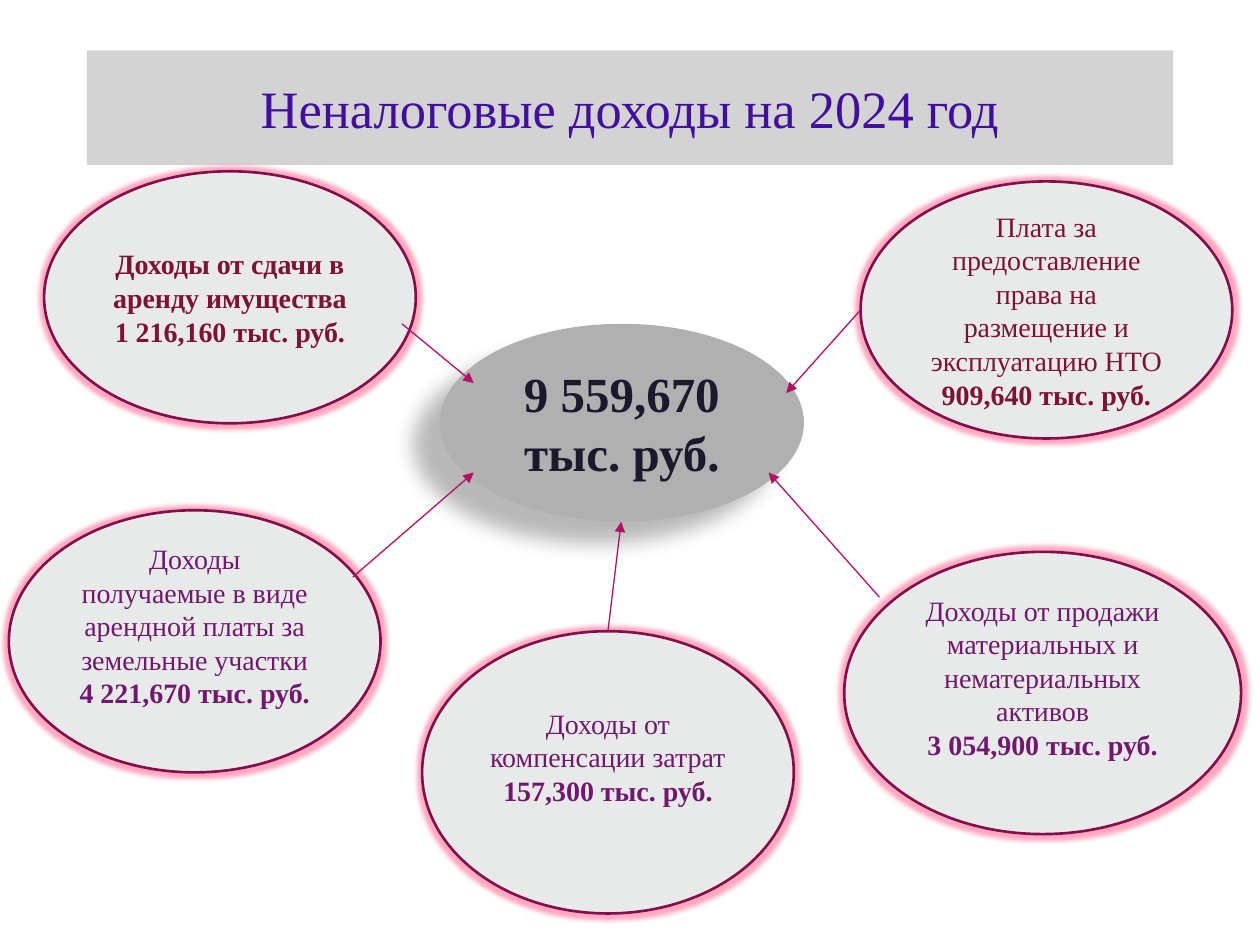
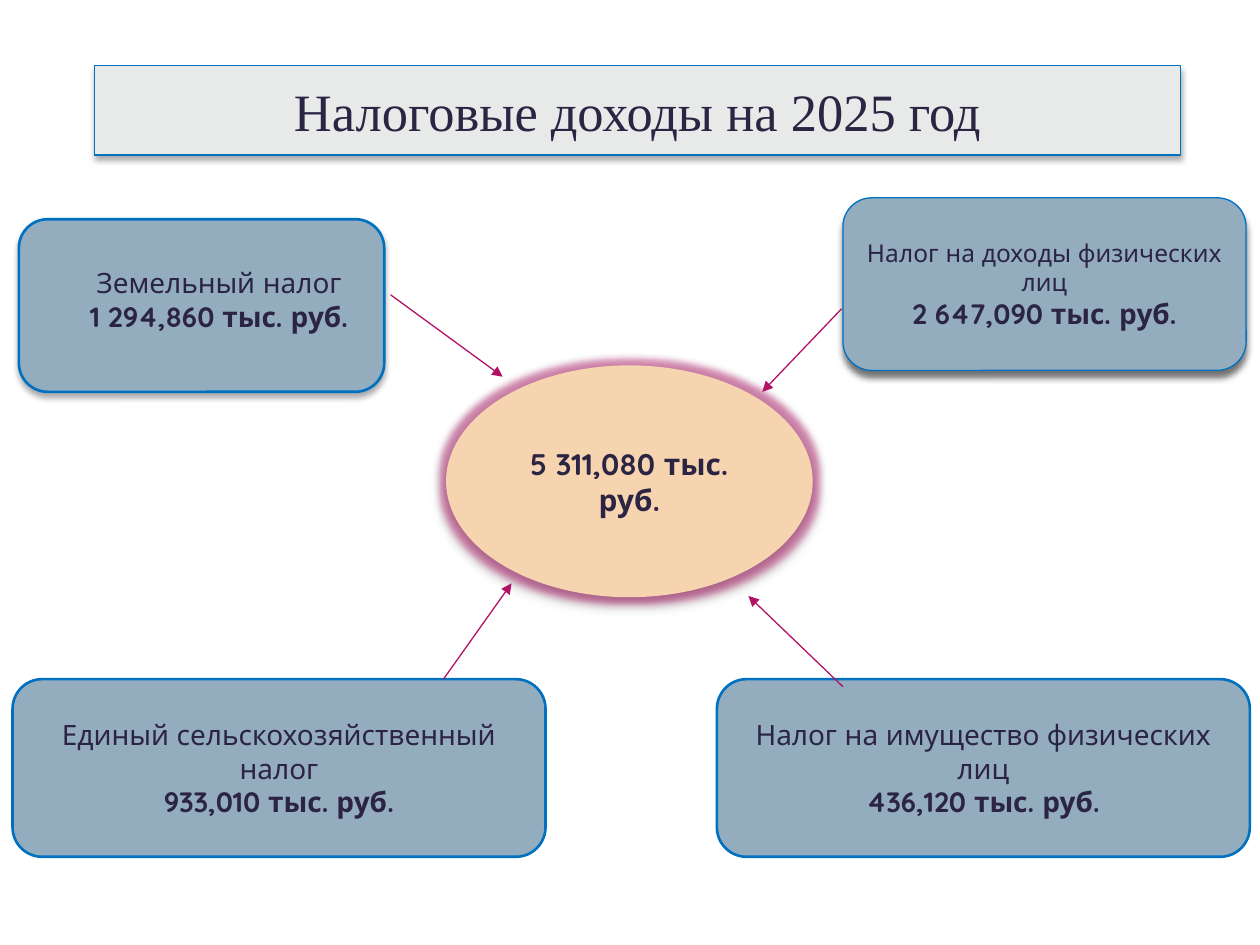
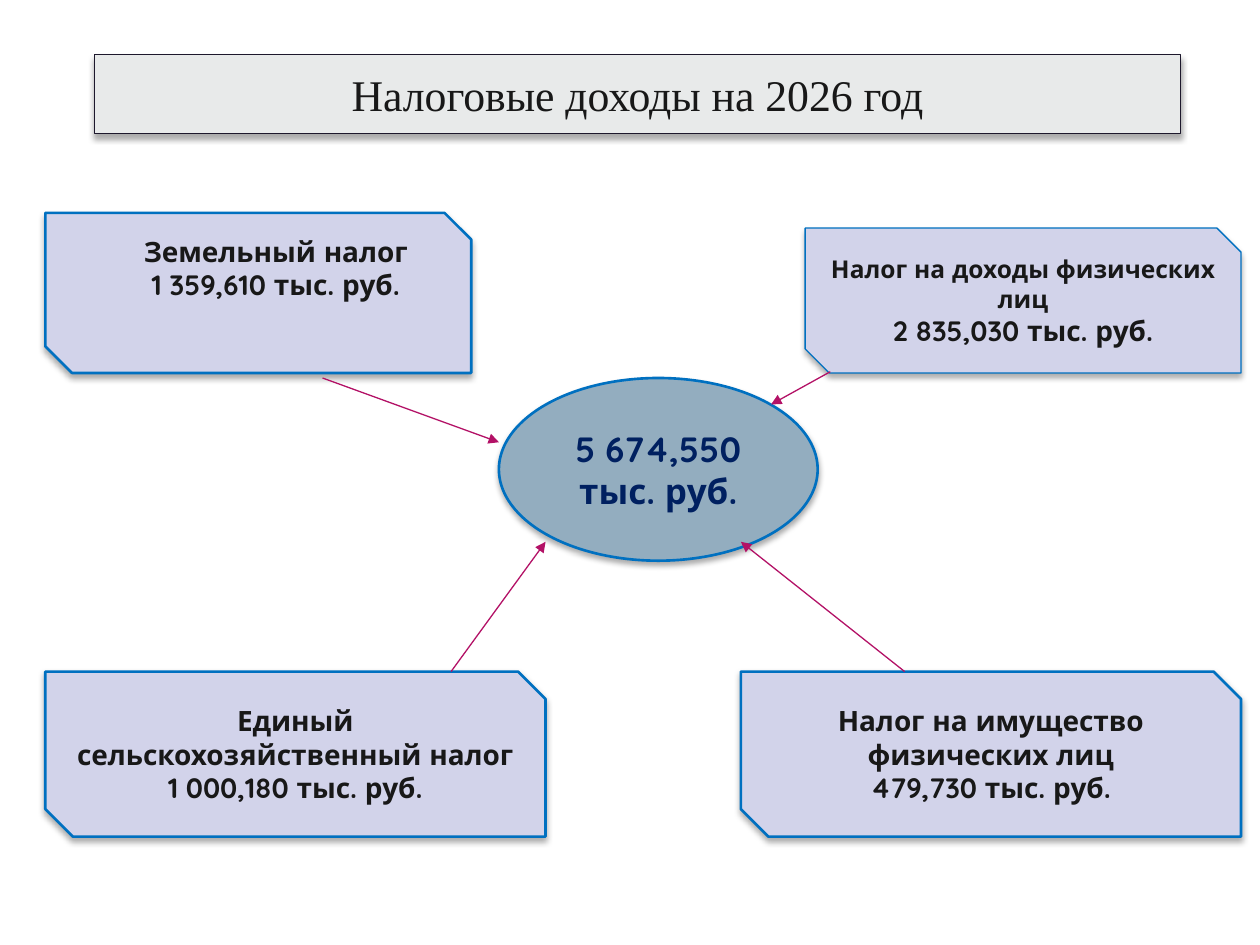
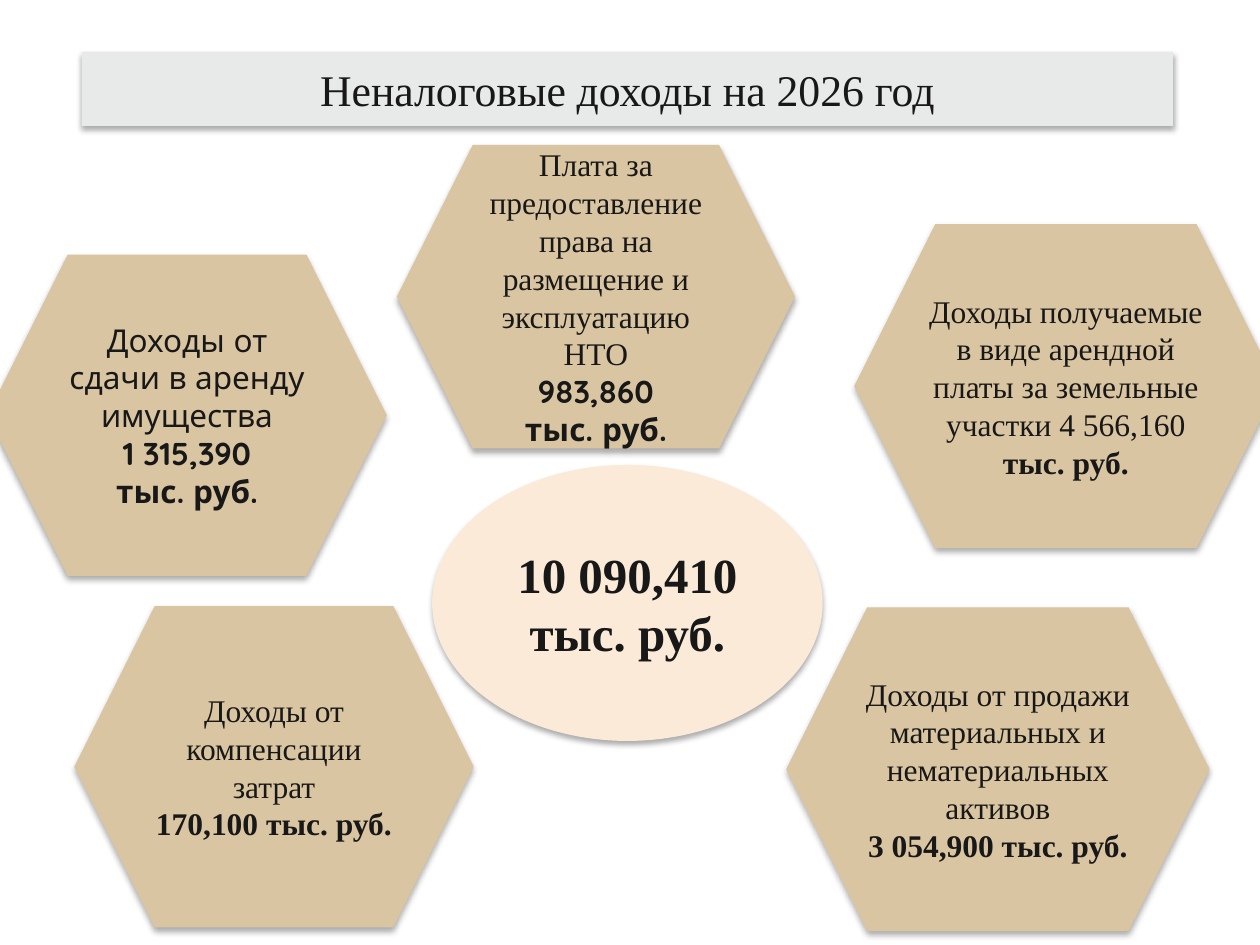
from collections import namedtuple

from lxml import etree
from pptx import Presentation
from pptx.dml.color import RGBColor
from pptx.enum.shapes import MSO_CONNECTOR, MSO_SHAPE
from pptx.enum.text import MSO_ANCHOR, MSO_AUTO_SIZE, PP_ALIGN
from pptx.oxml.ns import qn
from pptx.util import Inches, Pt

ELLIPSE = MSO_SHAPE.OVAL
ROUNDED = MSO_SHAPE.ROUNDED_RECTANGLE
SNIPPED = MSO_SHAPE.SNIP_2_DIAG_RECTANGLE
HEXAGON = MSO_SHAPE.HEXAGON
STRAIGHT = MSO_CONNECTOR.STRAIGHT
CENTER = PP_ALIGN.CENTER
MIDDLE = MSO_ANCHOR.MIDDLE
NO_AUTOFIT = MSO_AUTO_SIZE.NONE

SILVER = RGBColor(0xD3, 0xD3, 0xD3)
GREY = RGBColor(0xB0, 0xB0, 0xB0)
PALE = RGBColor(0xE8, 0xEA, 0xEA)
STEEL = RGBColor(0x93, 0xAD, 0xBF)
LILAC = RGBColor(0xD2, 0xD3, 0xEA)
PEACH = RGBColor(0xF6, 0xD4, 0xB0)
CREAM = RGBColor(0xFB, 0xEA, 0xD8)
SAND = RGBColor(0xD9, 0xC5, 0xA1)
BLUE = RGBColor(0x00, 0x70, 0xC0)
NAVY = RGBColor(0x00, 0x20, 0x60)
VIOLET = RGBColor(0x42, 0x0E, 0xA0)
INK = RGBColor(0x1D, 0x18, 0x2C)
PLUM = RGBColor(0x2C, 0x24, 0x43)
BLACK = RGBColor(0x18, 0x18, 0x18)
WINE = RGBColor(0x84, 0x0D, 0x4B)
CRIMSON = RGBColor(0x7E, 0x12, 0x33)
PURPLE = RGBColor(0x71, 0x18, 0x6E)
MAGENTA = RGBColor(0xB3, 0x11, 0x66)
PINK = RGBColor(0xFF, 0x50, 0x80)
SHADE = RGBColor(0, 0, 0)

SERIF = "Times New Roman"
SANS = "Quicksand"
BOLD = {"bold": True}
SMALL = {"size": Pt(14)}

Box = namedtuple("Box", "left top width height")
Look = namedtuple("Look", "fill edge weight effects", defaults=(None, 0, ()))
Effect = namedtuple("Effect", "tag color alpha values")

PAGE = Box(0, 0, 10, 7.5)


def glow(color, alpha, radius):
    return Effect("a:glow", color, alpha, {"rad": Pt(radius)})


def shadow(alpha, blur, distance, angle):
    values = {"blurRad": Pt(blur), "dist": Pt(distance), "dir": angle * 60000, "rotWithShape": 0}
    return Effect("a:outerShdw", SHADE, alpha, values)


SOFT = shadow(32, 3.5, 2.2, 90)


def text_format(size, name, color, bold=False):
    return {"size": Pt(size), "name": name, "color": color, "bold": bold}


def format_span(span, values):
    for key, value in values.items():
        if key == "color":
            span.font.color.rgb = value
        else:
            setattr(span.font, key, value)


def write(frame, paragraphs, base, insets=None):
    settings = {"word_wrap": True, "auto_size": NO_AUTOFIT, "vertical_anchor": MIDDLE}
    for key, value in settings.items():
        setattr(frame, key, value)
    for side, length in (insets or {}).items():
        setattr(frame, f"margin_{side}", Inches(length))
    for index, spans in enumerate(paragraphs):
        para = frame.paragraphs[0] if index == 0 else frame.add_paragraph()
        para.alignment = CENTER
        for words, changes in spans:
            span = para.add_run()
            span.text = words
            format_span(span, {**base, **changes})


def dress(shape, look):
    shape.fill.solid()
    shape.fill.fore_color.rgb = look.fill
    if look.edge is None:
        shape.line.fill.background()
    else:
        shape.line.color.rgb = look.edge
        shape.line.width = Pt(look.weight)
    shape.shadow.inherit = False
    holder = shape.element.spPr.find(qn("a:effectLst"))
    for effect in look.effects:
        values = {key: str(value) for key, value in effect.values.items()}
        node = etree.SubElement(holder, qn(effect.tag), values)
        color = etree.SubElement(node, qn("a:srgbClr"), val=str(effect.color))
        etree.SubElement(color, qn("a:alpha"), val=str(effect.alpha * 1000))


def add_title(page, box, words, look, base):
    title = page.shapes.title
    for key, value in box._asdict().items():
        setattr(title, key, Inches(value))
    dress(title, look)
    write(title.text_frame, [[(words, {})]], base)


def add_figure(page, area, kind, box, look, paragraphs, base, insets=None):
    figure = page.shapes.add_shape(kind, Inches(area.left + box[0]), Inches(area.top + box[1]),
                                   Inches(box[2]), Inches(box[3]))
    dress(figure, look)
    write(figure.text_frame, paragraphs, base, insets)
    return figure


def add_arrow(page, area, start, end):
    points = [Inches(value) for value in (area.left + start[0], area.top + start[1],
                                          area.left + end[0], area.top + end[1])]
    arrow = page.shapes.add_connector(STRAIGHT, *points)
    arrow.line.color.rgb = MAGENTA
    arrow.line.width = Pt(0.75)
    properties = arrow.element.spPr
    etree.SubElement(properties.find(qn("a:ln")), qn("a:tailEnd"), type="triangle")
    etree.SubElement(properties, qn("a:effectLst"))
    return arrow


def add_arrows(page, area, ends):
    return [add_arrow(page, area, start, end) for start, end in ends]


def entry(label, amount, label_changes=None, amount_changes=None):
    return [[(label, label_changes or {})], [(amount, BOLD if amount_changes is None else amount_changes)]]


def other_income_2024(page, area):
    add_title(page, Box(0.69, 0.4, 8.62, 0.91), "Неналоговые доходы на 2024 год",
              Look(SILVER), text_format(30, SERIF, VIOLET))
    add_figure(page, area, ELLIPSE, (3.49, 2.57, 2.89, 1.57),
               Look(GREY, effects=(shadow(28, 11.8, 19.7, 141),)),
               [[("9 559,670 тыс. руб.", {})]], text_format(28, SERIF, INK, True))
    bubble = Look(PALE, WINE, 1.5, (glow(PINK, 50, 5),))
    red = text_format(16, SERIF, CRIMSON)
    purple = text_format(16, SERIF, PURPLE)
    raised = {"bottom": 0.3}
    sources = [
        ((0.35, 1.36, 2.95, 2), red, None,
         entry("Доходы от сдачи в аренду имущества", "1 216,160 тыс. руб.", BOLD)),
        ((6.83, 1.44, 2.95, 2.04), red, None,
         entry("Плата за предоставление права на размещение и эксплуатацию НТО", "909,640 тыс. руб.")),
        ((3.35, 5.01, 2.95, 2.24), purple, raised,
         entry("Доходы от компенсации затрат", "157,300 тыс. руб.")),
        ((0.07, 4.05, 2.95, 2.08), purple, raised,
         entry("Доходы получаемые в виде арендной платы за земельные участки", "4 221,670 тыс. руб.")),
        ((6.7, 4.38, 3.15, 2.24), purple, raised,
         entry("Доходы от продажи материальных и нематериальных активов", "3 054,900 тыс. руб.")),
    ]
    bubbles = [add_figure(page, area, ELLIPSE, box, bubble, paragraphs, base, insets)
               for box, base, insets, paragraphs in sources]
    arrows = add_arrows(page, area, [
        ((3.19, 2.57), (3.76, 3.04)),
        ((6.83, 2.46), (6.24, 3.12)),
        ((6.98, 4.74), (6.1, 3.75)),
        ((4.82, 5.01), (4.93, 4.14)),
        ((2.8, 4.58), (3.76, 3.75)),
    ])
    arrows[3].begin_connect(bubbles[2], 0)


def taxes_2025(page, area):
    add_title(page, Box(0.75, 0.52, 8.62, 0.71), "Налоговые доходы на 2025 год",
              Look(PALE, BLUE, 0.75, (SOFT,)), text_format(30, SERIF, PLUM))
    add_figure(page, area, ELLIPSE, (3.54, 2.9, 2.91, 1.84),
               Look(PEACH, effects=(glow(MAGENTA, 45, 8), SOFT)),
               [[("5 311,080 тыс. руб.", {})]], text_format(17, SANS, PLUM, True))
    flat = Look(STEEL, BLUE, 1.5)
    base = text_format(16, SANS, PLUM)
    taxes = [
        ((0.15, 1.74, 2.9, 1.37), flat._replace(effects=(SOFT,)),
         {"left": 0.28, "top": 0, "right": 0, "bottom": 0.1},
         entry("Земельный налог", "1 294,860 тыс. руб.")),
        ((6.69, 1.57, 3.2, 1.37), Look(STEEL, BLUE, 0.75, (shadow(55, 4, 4, 90),)), None,
         entry("Налог на доходы физических лиц", "2 647,090 тыс. руб.", SMALL)),
        ((0.1, 5.39, 4.23, 1.41), flat, None,
         entry("Единый сельскохозяйственный налог", "933,010 тыс. руб.")),
        ((5.69, 5.39, 4.23, 1.41), flat, None,
         entry("Налог на имущество физических лиц", "436,120 тыс. руб.")),
    ]
    for box, look, insets, paragraphs in taxes:
        add_figure(page, area, ROUNDED, box, look, paragraphs, base, insets)
    add_arrows(page, area, [
        ((3.1, 2.34), (3.99, 2.99)),
        ((6.68, 2.45), (6.05, 3.11)),
        ((3.52, 5.39), (4.06, 4.63)),
        ((6.69, 5.45), (5.94, 4.73)),
    ])


def taxes_2026(page, area):
    add_title(page, Box(0.75, 0.43, 8.62, 0.63), "Налоговые доходы на 2026 год",
              Look(PALE, INK, 0.75, (SOFT,)), text_format(25, SERIF, BLACK))
    add_figure(page, area, ELLIPSE, (3.96, 3, 2.53, 1.45), Look(STEEL, BLUE, 1.5, (SOFT,)),
               [[("5 674,550 тыс. руб.", {})]], text_format(20, SANS, NAVY, True))
    card = Look(LILAC, BLUE, 1.5, (SOFT,))
    base = text_format(16, SANS, BLACK, True)
    taxes = [
        ((0.36, 1.69, 3.38, 1.27), card, {"left": 0.28, "top": 0, "right": 0, "bottom": 0.4},
         entry("Земельный налог", "1 359,610 тыс. руб.")),
        ((6.39, 1.81, 3.46, 1.15), card._replace(weight=0.75), None,
         entry("Налог на доходы физических лиц", "2 835,030 тыс. руб.", SMALL)),
        ((0.36, 5.33, 3.97, 1.31), card, None,
         [[("Единый", {})]] + entry("сельскохозяйственный налог", "1 000,180 тыс. руб.")),
        ((5.88, 5.33, 3.97, 1.31), card, None,
         entry("Налог на имущество физических лиц", "479,730 тыс. руб.")),
    ]
    for box, look, insets, paragraphs in taxes:
        add_figure(page, area, SNIPPED, box, look, paragraphs, base, insets)
    add_arrows(page, area, [
        ((2.56, 3), (3.96, 3.51)),
        ((6.59, 2.95), (6.12, 3.21)),
        ((3.58, 5.33), (4.33, 4.3)),
        ((7.18, 5.33), (5.88, 4.3)),
    ])


def other_income_2026(page, area):
    add_title(page, Box(0.65, 0.41, 8.66, 0.59), "Неналоговые доходы на 2026 год",
              Look(PALE, effects=(SOFT,)), text_format(25, SERIF, BLACK))
    add_figure(page, area, ELLIPSE, (3.43, 3.69, 3.1, 2.19), Look(CREAM, effects=(SOFT,)),
               entry("10 090,410", "тыс. руб."), text_format(28, SERIF, BLACK, True))
    cell = Look(SAND, effects=(SOFT,))
    serif = text_format(18, SERIF, BLACK)
    sans = text_format(18, SANS, BLACK)
    unit = [[("тыс. руб.", {"name": SANS, **BOLD})]]
    sources = [
        ((6.78, 1.78, 3.36, 2.57), serif,
         [[("Доходы получаемые в виде арендной платы за земельные участки 4 566,160", {}),
           (" тыс. руб.", BOLD)]]),
        ((3.15, 1.15, 3.16, 2.41), serif,
         entry("Плата за предоставление права на размещение и эксплуатацию НТО", "983,860",
               None, {"name": SANS, **BOLD}) + unit),
        ((-0.1, 2.02, 3.17, 2.55), sans,
         entry("Доходы от сдачи в аренду имущества", "1 315,390") + unit),
        ((0.59, 4.81, 3.17, 2.55), serif,
         entry("Доходы от компенсации затрат", "170,100 тыс. руб.")),
        ((6.24, 4.82, 3.36, 2.57), serif,
         entry("Доходы от продажи материальных и нематериальных активов", "3 054,900 тыс. руб.")),
    ]
    for box, base, paragraphs in sources:
        add_figure(page, area, HEXAGON, box, cell, paragraphs, base)


def main():
    deck = Presentation()
    deck.slide_width = Inches(PAGE.width)
    deck.slide_height = Inches(PAGE.height)
    title_only = deck.slide_layouts[5]
    for build in (other_income_2024, taxes_2025, taxes_2026, other_income_2026):
        build(deck.slides.add_slide(title_only), PAGE)
    deck.save("out.pptx")


if __name__ == "__main__":
    main()
